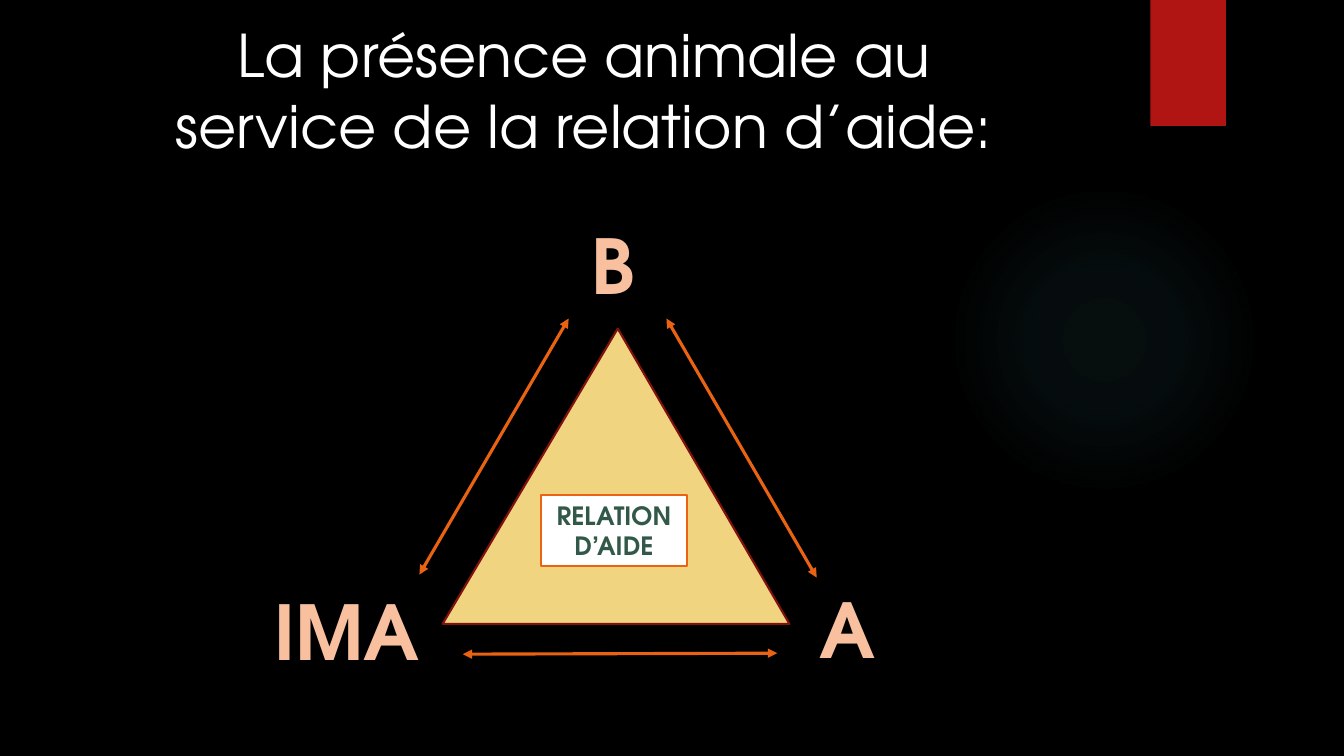
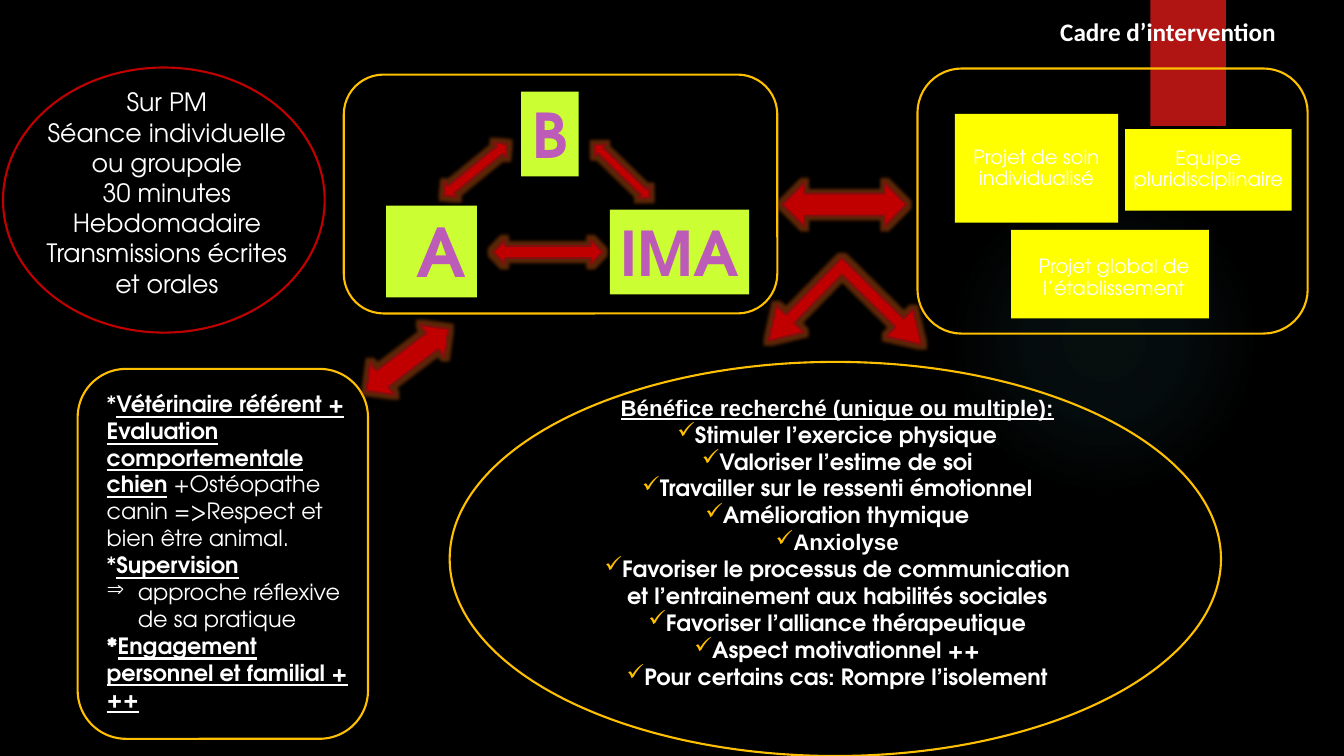
from dataclasses import dataclass

from pptx import Presentation
from pptx.dml.color import RGBColor
from pptx.enum.shapes import MSO_CONNECTOR, MSO_SHAPE
from pptx.enum.text import MSO_ANCHOR, PP_ALIGN
from pptx.oxml import parse_xml
from pptx.oxml.ns import nsdecls
from pptx.util import Inches, Pt

BLACK = RGBColor(0x00, 0x00, 0x00)
WHITE = RGBColor(0xFF, 0xFF, 0xFF)
BANNER_RED = RGBColor(0xB0, 0x15, 0x13)
DARK_RED = RGBColor(0x82, 0x10, 0x0E)
ARROW_RED = RGBColor(0xC0, 0x00, 0x00)
ORANGE = RGBColor(0xEA, 0x63, 0x12)
PEACH = RGBColor(0xF8, 0xC0, 0x9F)
SAND = RGBColor(0xF0, 0xD4, 0x7F)
GREEN = RGBColor(0x32, 0x59, 0x48)
GOLD = RGBColor(0xFF, 0xC0, 0x00)
LIME = RGBColor(0xCC, 0xFF, 0x33)
PURPLE = RGBColor(0xBD, 0x5B, 0xB8)
YELLOW = RGBColor(0xFF, 0xFF, 0x00)
HALO = "50B9C1"

MAIN_FONT = "TeX Gyre Adventor"


@dataclass
class Box:
    left: float
    top: float
    width: float
    height: float

    def inside(self, left, top, width, height):
        """A box whose offset is counted from this one."""
        return Box(self.left + left, self.top + top, width, height)

    def lengths(self):
        return [Inches(v) for v in (self.left, self.top, self.width, self.height)]


def add_figure(page, preset, box, fill=None, line=None, rotation=0):
    figure = page.shapes.add_shape(preset, *box.lengths())
    figure.shadow.inherit = False
    figure.rotation = rotation
    if fill is None:
        figure.fill.background()
    else:
        figure.fill.solid()
        figure.fill.fore_color.rgb = fill
    if line is None:
        figure.line.fill.background()
    else:
        figure.line.color.rgb = line
        figure.line.width = Pt(1.5)
    return figure


def add_bullet(para, mark, colour=None, indent=0):
    properties = para._p.get_or_add_pPr()
    properties.set("marL", str(Inches(indent)))
    properties.set("indent", str(-Inches(indent)))
    if colour is not None:
        properties.append(parse_xml(
            f'<a:buClr {nsdecls("a")}><a:srgbClr val="{colour}"/></a:buClr>'))
    properties.append(parse_xml(f'<a:buChar {nsdecls("a")} char="{mark}"/>'))


def style_span(span, size, colour, font=MAIN_FONT, bold=False, underline=False):
    span.font.size = Pt(size)
    span.font.name = font
    span.font.color.rgb = colour
    span.font.bold = bold
    span.font.underline = underline


def write(shape, lines, size, colour, font=MAIN_FONT, bold=False,
          align=PP_ALIGN.CENTER, anchor=MSO_ANCHOR.TOP, wrap=True):
    """Fill a shape with one paragraph for each line."""
    frame = shape.text_frame
    frame.text = "\n".join(lines)
    frame.word_wrap = wrap
    frame.vertical_anchor = anchor
    for para in frame.paragraphs:
        para.alignment = align
        for span in para.runs:
            style_span(span, size, colour, font, bold)
    return frame


def add_text(page, box, lines, size, colour, **style):
    return write(page.shapes.add_textbox(*box.lengths()), lines, size, colour, **style)


def add_double_arrow(page, start, end):
    arrow = page.shapes.add_connector(
        MSO_CONNECTOR.STRAIGHT, *[Inches(v) for v in (*start, *end)])
    arrow.line.color.rgb = ORANGE
    arrow.line.width = Pt(2.25)
    line = arrow.line._get_or_add_ln()
    for tip in ("headEnd", "tailEnd"):
        line.append(parse_xml(f'<a:{tip} {nsdecls("a")} type="triangle"/>'))
    arrow._element.spPr.append(parse_xml(f'<a:effectLst {nsdecls("a")}/>'))


def add_glowing_arrow(page, box, rotation=0, preset=MSO_SHAPE.LEFT_RIGHT_ARROW):
    arrow = add_figure(page, preset, box, ARROW_RED, DARK_RED, rotation)
    arrow._element.spPr.find("{*}effectLst").append(parse_xml(
        f'<a:glow {nsdecls("a")} rad="{Pt(5)}"><a:srgbClr val="{ORANGE}">'
        '<a:alpha val="40000"/></a:srgbClr></a:glow>'))
    return arrow


def add_page(deck):
    """A black page with the soft halo and the red banner."""
    page = deck.slides.add_slide(deck.slide_layouts[6])
    page.background.fill.solid()
    page.background.fill.fore_color.rgb = BLACK
    halo = add_figure(page, MSO_SHAPE.OVAL, Box(9.41, 1.83, 3.08, 3.08), BLACK)
    stops = "".join(
        f'<a:gs pos="{place}000"><a:srgbClr val="{HALO}">'
        f'<a:alpha val="{alpha}000"/></a:srgbClr></a:gs>'
        for place, alpha in ((0, 7), (36, 6), (69, 0), (100, 0)))
    properties = halo._element.spPr
    properties.replace(properties.find("{*}solidFill"), parse_xml(
        f'<a:gradFill {nsdecls("a")}><a:gsLst>{stops}</a:gsLst><a:path path="circle">'
        '<a:fillToRect l="50000" t="50000" r="50000" b="50000"/></a:path></a:gradFill>'))
    add_figure(page, MSO_SHAPE.RECTANGLE, Box(11.41, 0, 0.75, 1.25), BANNER_RED)
    return page


def add_relation_triangle(page, box):
    triangle = add_figure(page, MSO_SHAPE.ISOSCELES_TRIANGLE,
                          box.inside(1.78, 1.14, 3.44, 2.93), SAND, DARK_RED)
    triangle.adjustments[0] = 0.505
    centre = add_figure(page, MSO_SHAPE.RECTANGLE,
                        box.inside(2.76, 2.79, 1.44, 0.71), WHITE, ORANGE)
    write(centre, ["RELATION", "D’AIDE"], 18, GREEN, bold=True)
    for name, left, top, width in (("A", 5.42, 3.61, 0.76), ("B", 3.15, 0, 0.64),
                                   ("IMA", 0, 3.63, 1.66)):
        add_text(page, box.inside(left, top, width, 1.01), [name], 54, PEACH,
                 bold=True, wrap=False)
    for start, end in (((3.03, 1.04), (1.55, 3.58)), ((1.98, 4.37), (5.1, 4.36)),
                       ((4, 1.04), (5.49, 3.61))):
        add_double_arrow(page, (box.left + start[0], box.top + start[1]),
                         (box.left + end[0], box.top + end[1]))


def add_session_oval(page, box):
    add_figure(page, MSO_SHAPE.OVAL, box, line=ARROW_RED)
    add_text(page, box.inside(0.33, 0.14, 2.59, 2.22),
             ["Sur PM", "Séance individuelle ou groupale", "30 minutes",
              "Hebdomadaire", "Transmissions écrites et orales"], 18, WHITE)


def add_actors_panel(page, box):
    add_figure(page, MSO_SHAPE.ROUNDED_RECTANGLE, box, line=GOLD)
    for name, size, left, top, width, height in (
            ("B", 44, 1.76, 0.17, 0.57, 0.84), (" A", 48, 0.42, 1.3, 0.9, 0.91),
            ("IMA", 44, 2.64, 1.34, 1.38, 0.84)):
        tile = add_figure(page, MSO_SHAPE.RECTANGLE,
                          box.inside(left, top, width, height), LIME)
        write(tile, [name], size, PURPLE, bold=True, wrap=False)
    for left, top, width, height, rotation in (
            (0.9, 0.85, 0.81, 0.19, 320.8), (1.48, 1.64, 1.09, 0.24, 180),
            (2.38, 0.88, 0.76, 0.16, 44)):
        add_glowing_arrow(page, box.inside(left, top, width, height), rotation)


def add_projects_panel(page, box):
    add_figure(page, MSO_SHAPE.ROUNDED_RECTANGLE, box, line=GOLD)
    for name, left, top, width, height, shift in (
            ("Projet de soin individualisé", 0.37, 0.45, 1.62, 1.08, 0),
            ("Equipe pluridisciplinaire", 2.06, 0.6, 1.65, 0.81, 0),
            ("Projet global de l’établissement", 0.93, 1.6, 1.96, 0.88, 0.08)):
        tile = add_figure(page, MSO_SHAPE.RECTANGLE,
                          box.inside(left, top, width, height), YELLOW)
        frame = write(tile, [name], 14, WHITE, anchor=MSO_ANCHOR.MIDDLE)
        frame.margin_left = frame.margin_top = Inches(0.06 + shift)
        frame.margin_right = frame.margin_bottom = Inches(0.06)
        frame.paragraphs[0].line_spacing = 0.9


def add_commitments_panel(page, box):
    add_figure(page, MSO_SHAPE.ROUNDED_RECTANGLE, box, line=GOLD)
    frame = add_text(page, box.inside(0.19, 0.16, 2.59, 3.94), [""] * 4, 16, WHITE,
                     align=PP_ALIGN.LEFT)
    plain, bold, strong = {}, {"bold": True}, {"bold": True, "underline": True}
    content = (
        (("*", plain),
         ("Vétérinaire référent + Evaluation comportementale chien", strong),
         (" +Ostéopathe canin =>Respect et bien être animal.", plain)),
        (("*", plain), ("Supervision", strong)),
        (("approche réflexive de sa pratique", plain),),
        (("*", bold), ("Engagement personnel et familial +++", strong)))
    add_bullet(frame.paragraphs[2], "⇒", indent=0.31)
    for para, spans in zip(frame.paragraphs, content):
        for words, style in spans:
            span = para.add_run()
            span.text = words
            style_span(span, 16, WHITE, **style)


def add_benefits_oval(page, box):
    add_figure(page, MSO_SHAPE.OVAL, box, line=GOLD)
    frame = add_text(
        page, box.inside(1.43, 0.27, 4.83, 3.6),
        ["Bénéfice recherché (unique ou multiple):", "Stimuler l’exercice physique",
         "Valoriser l’estime de soi", "Travailler sur le ressenti émotionnel",
         "Amélioration thymique", "Anxiolyse",
         "Favoriser le processus de communication et l’entrainement aux habilités sociales",
         "Favoriser l’alliance thérapeutique", "Aspect motivationnel ++",
         "Pour certains cas: Rompre l’isolement"], 16, WHITE, bold=True)
    heading, *benefits = frame.paragraphs
    heading.runs[0].font.underline = True
    for para in (heading, benefits[4]):
        para.runs[0].font.name = "Arial"
    for para in benefits:
        add_bullet(para, "✓", GOLD)


def build_relation_page(deck):
    page = add_page(deck)
    add_text(page, Box(1.31, 0.14, 8.96, 1.99),
             ["La présence animale au service de la relation d’aide:"], 42, WHITE)
    add_relation_triangle(page, Box(2.61, 2.12, 6.18, 4.64))


def build_framework_page(deck):
    page = add_page(deck)
    add_text(page, Box(10.13, 0.11, 2.91, 0.4), ["Cadre d’intervention"], 18, WHITE,
             font="Calibri", bold=True)
    add_session_oval(page, Box(0.03, 0.67, 3.19, 2.63))
    add_actors_panel(page, Box(3.41, 0.74, 4.3, 2.37))
    add_projects_panel(page, Box(9.1, 0.68, 3.87, 2.63))
    add_commitments_panel(page, Box(0.77, 3.66, 2.88, 3.67))
    add_benefits_oval(page, Box(4.46, 3.59, 7.65, 3.91))
    add_glowing_arrow(page, Box(7.76, 1.81, 1.23, 0.44))
    add_glowing_arrow(page, Box(3.53, 3.37, 1.02, 0.4), 142.9)
    fork = add_glowing_arrow(page, Box(7.73, 2.65, 1.3, 1.23), 224.5,
                             MSO_SHAPE.LEFT_UP_ARROW)
    for index, value in enumerate((0.095, 0.155, 0.25)):
        fork.adjustments[index] = value


def main():
    deck = Presentation()
    deck.slide_width, deck.slide_height = Inches(13.33), Inches(7.5)
    build_relation_page(deck)
    build_framework_page(deck)
    deck.save("out.pptx")


if __name__ == "__main__":
    main()
